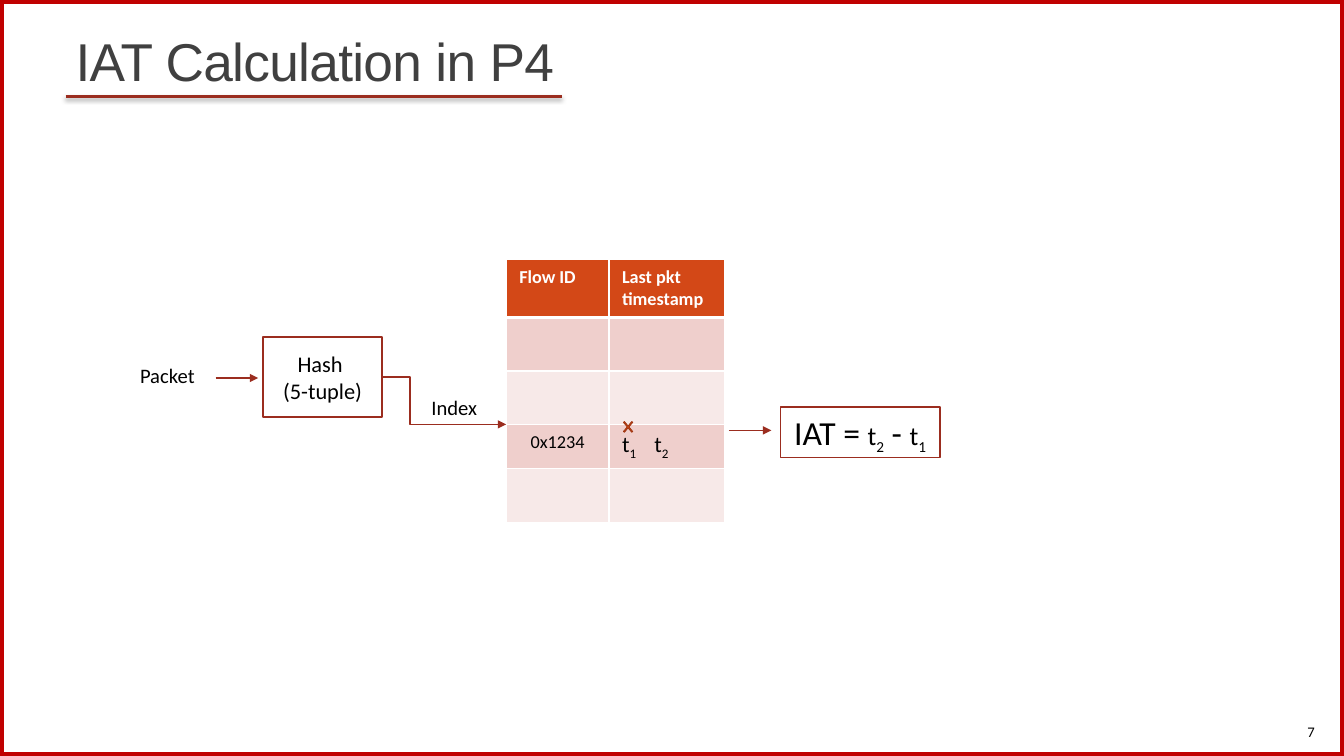
from lxml import etree
from pptx import Presentation
from pptx.dml.color import RGBColor
from pptx.enum.shapes import MSO_CONNECTOR, MSO_SHAPE
from pptx.enum.text import MSO_ANCHOR, MSO_AUTO_SIZE, PP_ALIGN
from pptx.oxml.ns import qn
from pptx.util import Inches, Pt

RECTANGLE, CROSS = MSO_SHAPE.RECTANGLE, MSO_SHAPE.MATH_MULTIPLY
STRAIGHT, ELBOW = MSO_CONNECTOR.STRAIGHT, MSO_CONNECTOR.ELBOW
LEFT, CENTER, RIGHT = PP_ALIGN.LEFT, PP_ALIGN.CENTER, PP_ALIGN.RIGHT
TOP, MIDDLE, BOTTOM = MSO_ANCHOR.TOP, MSO_ANCHOR.MIDDLE, MSO_ANCHOR.BOTTOM
NO_AUTOFIT = MSO_AUTO_SIZE.NONE

FRAME_RED = RGBColor(0xC0, 0x00, 0x00)
LINE_RED = RGBColor(0x9B, 0x2D, 0x1F)
ORANGE = RGBColor(0xD3, 0x48, 0x17)
DARK_ORANGE = RGBColor(0x9C, 0x35, 0x11)
BAND_DARK = RGBColor(0xEF, 0xCF, 0xCC)
BAND_LIGHT = RGBColor(0xF7, 0xE9, 0xE8)
GREY = RGBColor(0x40, 0x40, 0x40)
WHITE = RGBColor(0xFF, 0xFF, 0xFF)
BLACK = RGBColor(0x00, 0x00, 0x00)

TITLE = "IAT Calculation in P4"
SUBSCRIPT = -25000
LABELS = [
    ("Packet", (1.29, 3.55, 1.52, 0.35), 14.7, LEFT, TOP),
    ("Index", (4.18, 3.87, 1.18, 0.35), 14.7, LEFT, TOP),
    ("7", (11.71, 7.06, 1.43, 0.4), 10.5, RIGHT, MIDDLE),
]
HASH_LINES = [[("Hash ", 16, 0)], [("(5-tuple)", 16, 0)]]
IAT_LINES = [[("IAT = ", 24, 0), ("t", 18.7, 0), ("2", 18.7, SUBSCRIPT),
              (" - ", 24, 0), ("t", 18.7, 0), ("1", 18.7, SUBSCRIPT)]]
ARROWS = [((2.14, 3.75), (2.56, 3.75)), ((7.23, 4.27), (7.65, 4.27))]
COLUMN_WIDTHS = [1.02, 1.15]
ROW_HEIGHTS = [0.58, 0.53, 0.53, 0.4, 0.53]
TIMESTAMPS = [("t", 16, 0), ("1\t", 16, SUBSCRIPT), ("t", 16, 0), ("2", 16, SUBSCRIPT)]
CELLS = {
    (0, 0): ([("Flow ID", 13, 0)], LEFT),
    (0, 1): ([("Last pkt timestamp", 13, 0)], LEFT),
    (3, 0): ([("0x1234", 13, 0)], CENTER),
    (3, 1): (TIMESTAMPS, LEFT),
}


def add_spans(para, spans, align, color=BLACK, bold=False, font="Calibri"):
    """Add (text, size, baseline) runs to a paragraph."""
    para.alignment = align
    for text, size, baseline in spans:
        span = para.add_run()
        span.text = text
        span.font.name, span.font.size, span.font.bold = font, Pt(size), bold
        span.font.color.rgb = color
        if baseline:
            span.font._element.set("baseline", str(baseline))


def add_lines(frame, lines, align, anchor, wrap=True):
    """Fill a text frame with one paragraph per line."""
    frame.word_wrap, frame.vertical_anchor = wrap, anchor
    for index, spans in enumerate(lines):
        para = frame.add_paragraph() if index else frame.paragraphs[0]
        add_spans(para, spans, align)


def add_box(page, kind, place, fill, line, width):
    """Add a flat preset shape."""
    box = page.shapes.add_shape(kind, *map(Inches, place))
    box.shadow.inherit = False
    if fill is None:
        box.fill.background()
    else:
        box.fill.solid()
        box.fill.fore_color.rgb = fill
    box.line.color.rgb, box.line.width = line, Pt(width)
    return box


def add_line(page, kind, start, end, width, arrow=True):
    """Add a red connector and return it with its effect list."""
    line = page.shapes.add_connector(kind, *map(Inches, start + end))
    line.line.color.rgb, line.line.width = LINE_RED, Pt(width)
    if arrow:
        etree.SubElement(line.line._get_or_add_ln(), qn("a:tailEnd"), type="triangle")
    effects = etree.SubElement(line._element.spPr, qn("a:effectLst"))
    return line, effects


def add_title(page):
    """Place the title and its shadowed underline."""
    title = page.shapes.title
    title.left, title.top, title.width, title.height = map(Inches, (0.65, 0, 12.01, 0.97))
    frame = title.text_frame
    frame.auto_size, frame.vertical_anchor = NO_AUTOFIT, BOTTOM
    para = frame.paragraphs[0]
    para.line_spacing = 0.85
    add_spans(para, [(TITLE, 38, 0)], LEFT, GREY, font="Arial")
    para.runs[0].font._element.set("spc", "-50")
    effects = add_line(page, STRAIGHT, (0.65, 0.96), (5.57, 0.96), 2, arrow=False)[1]
    shadow = etree.SubElement(effects, qn("a:outerShdw"), blurRad=str(Pt(3.1)),
                              dist=str(Pt(1.6)), dir="5400000", rotWithShape="0")
    color = etree.SubElement(shadow, qn("a:srgbClr"), val=str(BLACK))
    etree.SubElement(color, qn("a:alpha"), val="38000")


def add_borders(cell, bottom):
    """Draw white borders around a cell."""
    for side, width in (("L", 1), ("R", 1), ("T", 1), ("B", bottom)):
        edge = etree.SubElement(cell._tc.get_or_add_tcPr(), qn("a:ln" + side), w=str(Pt(width)))
        fill = etree.SubElement(edge, qn("a:solidFill"))
        etree.SubElement(fill, qn("a:srgbClr"), val=str(WHITE))


def add_flow_table(page):
    """Build the flow table with its banded rows."""
    place = (5.02, 2.57, sum(COLUMN_WIDTHS), sum(ROW_HEIGHTS))
    table = page.shapes.add_table(len(ROW_HEIGHTS), len(COLUMN_WIDTHS), *map(Inches, place)).table
    for column, width in zip(table.columns, COLUMN_WIDTHS):
        column.width = Inches(width)
    for r, height in enumerate(ROW_HEIGHTS):
        table.rows[r].height = Inches(height)
        header = r == 0
        for c in range(len(COLUMN_WIDTHS)):
            cell = table.cell(r, c)
            cell.margin_left = cell.margin_right = Inches(0.13)
            cell.margin_top = cell.margin_bottom = Inches(0.07)
            add_borders(cell, 3 if header else 1)
            cell.fill.solid()
            cell.fill.fore_color.rgb = ORANGE if header else (BAND_LIGHT, BAND_DARK)[r % 2]
            if (r, c) in CELLS:
                spans, align = CELLS[r, c]
                add_spans(cell.text_frame.paragraphs[0], spans, align,
                          WHITE if header else BLACK, bold=header)
    properties = table.cell(3, 1).text_frame.paragraphs[0]._p.get_or_add_pPr()
    tabs = etree.SubElement(properties, qn("a:tabLst"))
    etree.SubElement(tabs, qn("a:tab"), pos=str(Inches(0.32)), algn="l")


def main():
    """Build the slide and save it."""
    deck = Presentation()
    deck.slide_width, deck.slide_height = Inches(13.33), Inches(7.5)
    page = deck.slides.add_slide(deck.slide_layouts[5])
    add_box(page, RECTANGLE, (0, 0, 13.33, 7.5), None, FRAME_RED, 6)
    add_title(page)
    hash_box = add_box(page, RECTANGLE, (2.61, 3.34, 1.18, 0.8), WHITE, LINE_RED, 1.25)
    add_lines(hash_box.text_frame, HASH_LINES, CENTER, MIDDLE)
    add_flow_table(page)
    elbow = add_line(page, ELBOW, (3.79, 3.74), (5.02, 4.21), 1)[0]
    elbow.begin_connect(hash_box, 3)
    guides = elbow._element.spPr.find(qn("a:prstGeom")).get_or_add_avLst()
    etree.SubElement(guides, qn("a:gd"), name="adj1", fmla="val 22500")
    for text, place, size, align, anchor in LABELS:
        label = page.shapes.add_textbox(*map(Inches, place))
        add_lines(label.text_frame, [[(text, size, 0)]], align, anchor)
    iat_box = add_box(page, RECTANGLE, (7.74, 4.04, 1.58, 0.5), WHITE, LINE_RED, 1.25)
    add_lines(iat_box.text_frame, IAT_LINES, CENTER, TOP, wrap=False)
    cross = add_box(page, CROSS, (6.15, 4.14, 0.16, 0.19), ORANGE, DARK_ORANGE, 0.5)
    cross.adjustments[0] = 0.083
    for start, end in ARROWS:
        add_line(page, STRAIGHT, start, end, 1)
    deck.save("out.pptx")


if __name__ == "__main__":
    main()
